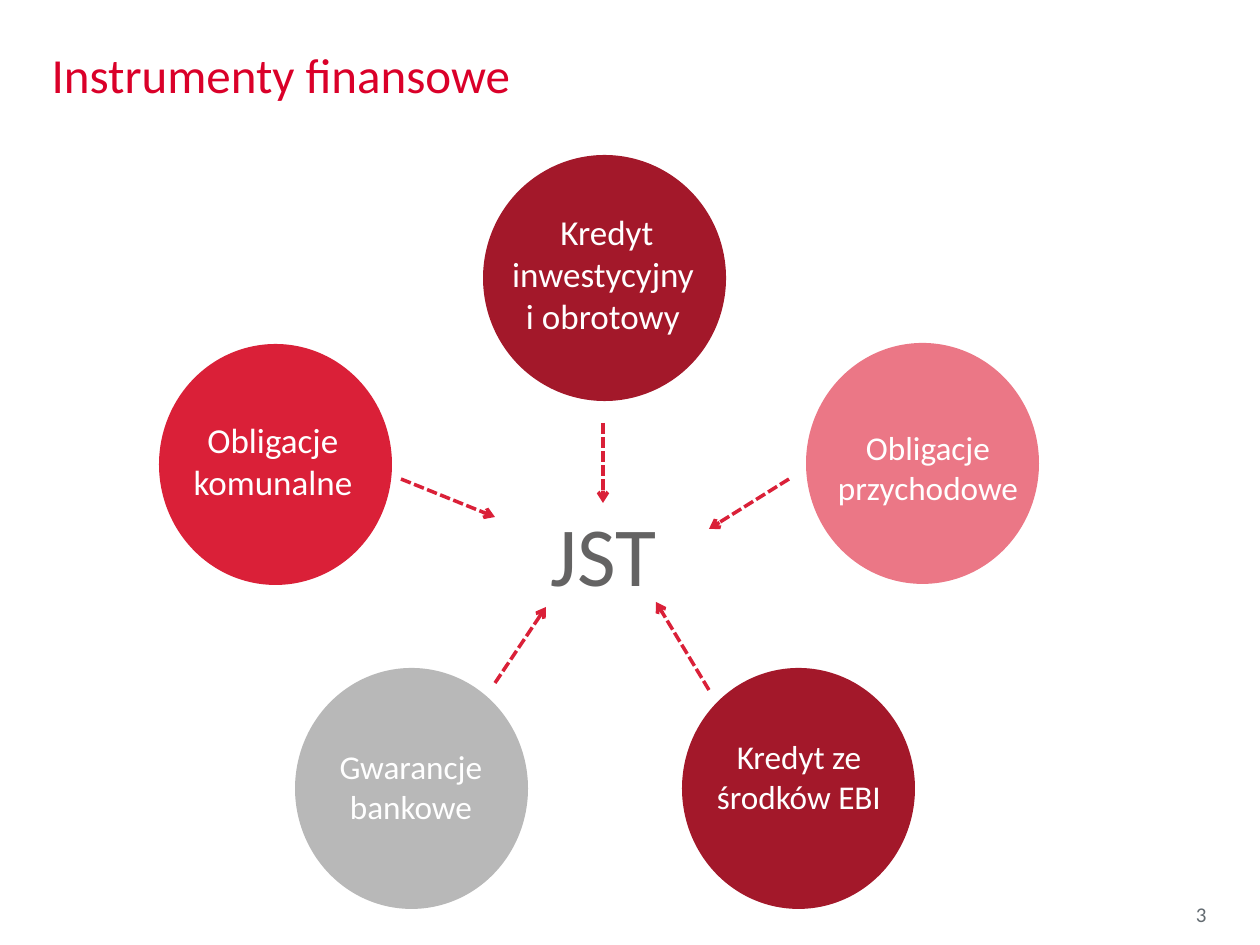
from lxml import etree
from pptx import Presentation
from pptx import util as u
from pptx.dml.color import RGBColor
from pptx.enum import dml, shapes, text
from pptx.oxml import ns

SCALE = 914400 / 126
COLORS = {
    "title": "DA0029", "red": "DA2038", "dark": "A3182A", "pink": "EB7786",
    "silver": "B8B8B8", "white": "FFFFFF", "gray": "646363", "slate": "636B71",
}
SIZE = (233, 241)
LABEL = 238
DISCS = [
    ((806, 343), SIZE, "pink", (809, 421), 93, 19, ["Obligacje przychodowe"]),
    ((682, 668), SIZE, "dark", (680, 730), 98, 19, ["Kredyt ze środków EBI"]),
    ((295, 668), SIZE, "silver", (292, 740), 98, 19, ["Gwarancje bankowe"]),
    ((159, 344), SIZE, "red", (154, 412), 103, 20, ["Obligacje komunalne"]),
    ((483, 155), (243, 246), "dark", (488, 204), 147, 20,
     ["Kredyt inwestycyjny ", "i obrotowy "]),
]
ARROWS = [
    (495, 683, 546, 607),
    (709, 690, 656, 602),
    (401, 479, 495, 517),
    (789, 479, 709, 529),
    (603, 423, 603, 503),
]


def px(*nums):
    """Turn pixel lengths into EMU."""
    return [u.Emu(round(n * SCALE)) for n in nums]


def rgb(name):
    """Look up a named colour."""
    return RGBColor.from_string(COLORS[name])


def write(shape, lines, size, color, align, wrap=True):
    """Fill a text frame with one run per paragraph."""
    frame = shape.text_frame
    frame.word_wrap = wrap
    frame.auto_size = text.MSO_AUTO_SIZE.NONE
    frame.vertical_anchor = text.MSO_ANCHOR.TOP
    for i, line in enumerate(lines):
        para = frame.add_paragraph() if i else frame.paragraphs[0]
        para.alignment = align
        run = para.add_run()
        run.text = line
        run.font.name = "Calibri"
        run.font.size = u.Pt(size)
        run.font.color.rgb = rgb(color)


def label(slide, box, lines, size, color, align=text.PP_ALIGN.CENTER, wrap=True):
    """Add a text box."""
    shape = slide.shapes.add_textbox(*px(*box))
    write(shape, lines, size, color, align, wrap)


def disc(slide, spot, size, color):
    """Add a plain filled circle."""
    shape = slide.shapes.add_shape(shapes.MSO_SHAPE.OVAL, *px(*spot, *size))
    shape.shadow.inherit = False
    shape.fill.solid()
    shape.fill.fore_color.rgb = rgb(color)
    shape.line.fill.background()


def arrow(slide, ends):
    """Add a dashed line with an open arrowhead at its end."""
    link = slide.shapes.add_connector(shapes.MSO_CONNECTOR.STRAIGHT, *px(*ends))
    link.line.color.rgb = rgb("red")
    link.line.width = u.Pt(2)
    link.line.dash_style = dml.MSO_LINE.SQUARE_DOT
    props = link.element.spPr
    etree.SubElement(props.find(ns.qn("a:ln")), ns.qn("a:tailEnd"), type="arrow")
    etree.SubElement(props, ns.qn("a:effectLst"))


def main():
    """Build the slide and save it."""
    deck = Presentation()
    deck.slide_width, deck.slide_height = px(1260, 945)
    slide = deck.slides.add_slide(deck.slide_layouts[5])
    title = slide.shapes.title
    title.left, title.top, title.width, title.height = px(39, 38, 907, 135)
    write(title, ["Instrumenty finansowe"], 28, "title", text.PP_ALIGN.LEFT)
    for spot, size, color, place, high, points, lines in DISCS:
        disc(slide, spot, size, color)
        label(slide, (*place, LABEL, high), lines, points, "white")
    label(slide, (536, 496, 135, 115), ["JST"], 48, "gray", wrap=False)
    for ends in ARROWS:
        arrow(slide, ends)
    label(slide, (949, 895, 270, 50), ["3"], 12, "slate", text.PP_ALIGN.RIGHT)
    deck.save("out.pptx")


if __name__ == "__main__":
    main()
